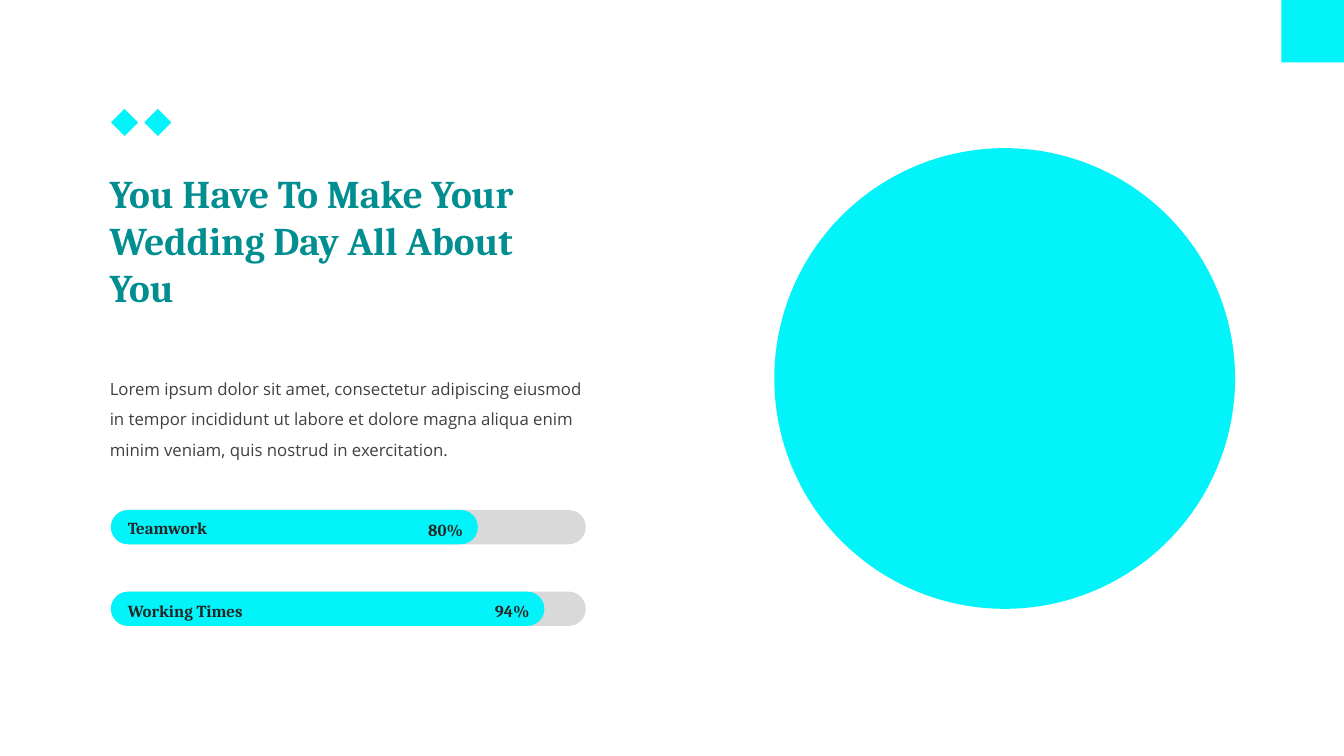
from pptx import Presentation
from pptx import util as u
from pptx.dml.color import RGBColor
from pptx.enum import shapes, text

COLORS = {
    "accent": "02F3F9",
    "track": "D9D9D9",
    "title": "018E91",
    "body": "404040",
    "label": "262626",
}
FORMATS = {
    "title": {"name": "Cambria", "size": u.Pt(28), "bold": True},
    "body": {"name": "Open Sans", "size": u.Pt(12), "bold": False},
    "label": {"name": "Cambria", "size": u.Pt(12), "bold": True},
}
FRAME = {"word_wrap": True}
BAR_FRAME = {
    "word_wrap": True,
    "vertical_anchor": text.MSO_ANCHOR.MIDDLE,
    "margin_bottom": 0,
}
SKILLS = [
    ("Teamwork", "80%", 5.06, 3.64, 5.09, 1.17),
    ("Working Times", "94%", 5.87, 4.3, 5.91, 1.56),
]


class SlideBuilder:
    def __init__(self, slide):
        self.slide = slide

    def shape(self, kind, box, color, rotation=0):
        shape = self.slide.shapes.add_shape(kind, *map(u.Inches, box))
        shape.shadow.inherit = False
        shape.fill.solid()
        shape.fill.fore_color.rgb = RGBColor.from_string(COLORS[color])
        shape.line.fill.background()
        shape.rotation = rotation
        return shape

    def bar(self, box, color):
        bar = self.shape(shapes.MSO_SHAPE.ROUNDED_RECTANGLE, box, color)
        bar.adjustments[0] = 0.5
        return bar

    def set_words(self, shape, words, style, frame=FRAME, **layout):
        for name, value in frame.items():
            setattr(shape.text_frame, name, value)
        paragraph = shape.text_frame.paragraphs[0]
        for name, value in layout.items():
            setattr(paragraph, name, value)
        run = paragraph.add_run()
        run.text = words
        for name, value in FORMATS[style].items():
            setattr(run.font, name, value)
        run.font.color.rgb = RGBColor.from_string(COLORS[style])

    def text(self, box, words, style, frame=FRAME, **layout):
        textbox = self.slide.shapes.add_textbox(*map(u.Inches, box))
        self.set_words(textbox, words, style, frame, **layout)
        textbox.text_frame.auto_size = text.MSO_AUTO_SIZE.SHAPE_TO_FIT_TEXT

    def skill(self, name, percent, top, width, label_top, label_width):
        self.bar((1.1, top, 4.71, 0.34), "track")
        progress = self.bar((1.1, top, width, 0.34), "accent")
        self.set_words(progress, percent, "label", BAR_FRAME, alignment=text.PP_ALIGN.RIGHT)
        self.text((1.17, label_top, label_width, 0.25), name, "label", BAR_FRAME)


def main():
    presentation = Presentation()
    presentation.slide_width = u.Inches(13.33)
    presentation.slide_height = u.Inches(7.5)
    builder = SlideBuilder(presentation.slides.add_slide(presentation.slide_layouts[6]))

    builder.shape(shapes.MSO_SHAPE.OVAL, (7.68, 1.47, 4.57, 4.57), "accent")
    builder.shape(shapes.MSO_SHAPE.RECTANGLE, (12.71, 0, 0.62, 0.62), "accent")
    for left in (1.14, 1.47):
        builder.shape(shapes.MSO_SHAPE.RECTANGLE, (left, 1.12, 0.19, 0.19), "accent", 45)
    for skill in SKILLS:
        builder.skill(*skill)

    builder.text(
        (0.99, 1.63, 4.26, 1.51),
        "You Have To Make Your Wedding Day All About You",
        "title",
    )
    builder.text(
        (0.99, 3.61, 4.99, 0.98),
        "Lorem ipsum dolor sit amet, consectetur adipiscing eiusmod in tempor "
        "incididunt ut labore et dolore magna aliqua enim minim veniam, quis "
        "nostrud in exercitation.",
        "body",
        line_spacing=1.5,
    )
    presentation.save("out.pptx")


if __name__ == "__main__":
    main()
